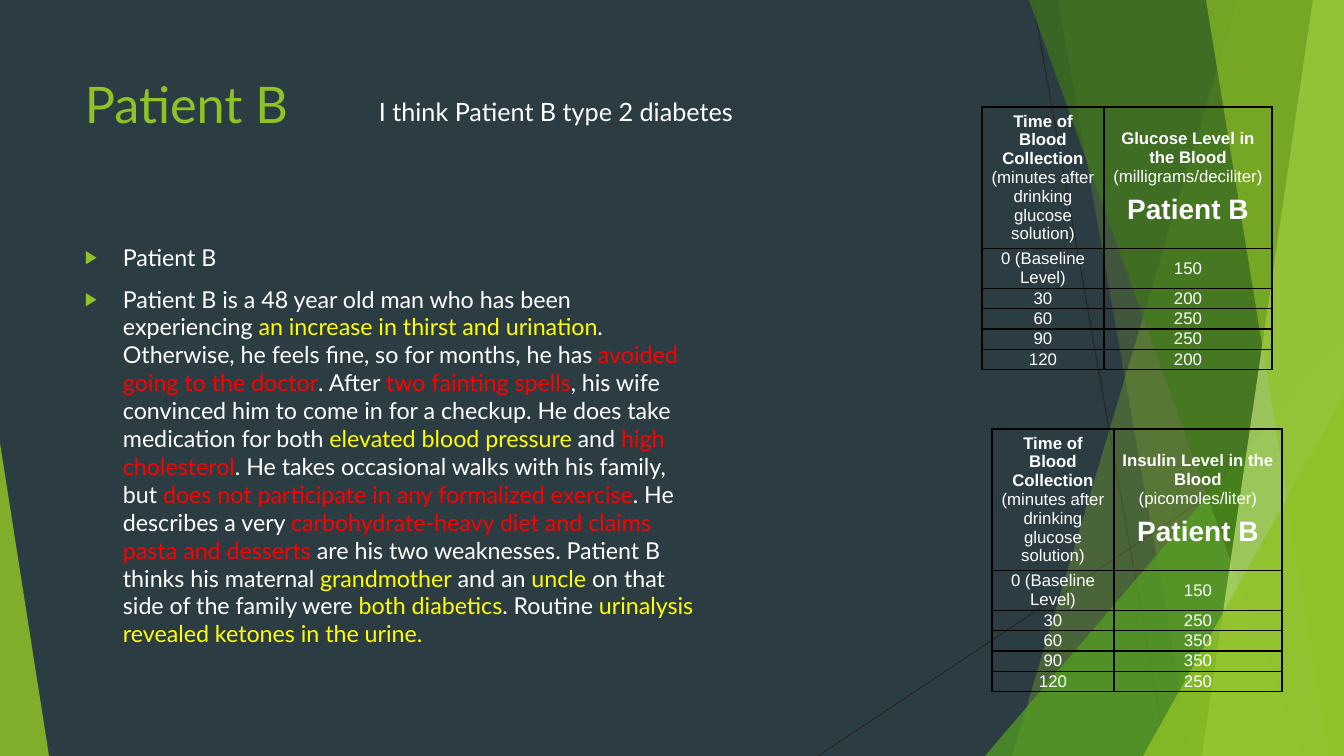
from lxml import etree
from pptx import Presentation
from pptx.dml.color import RGBColor
from pptx.enum.shapes import MSO_CONNECTOR, MSO_SHAPE
from pptx.enum.text import MSO_ANCHOR, PP_ALIGN
from pptx.oxml.ns import qn
from pptx.util import Pt

STRAIGHT, TRIANGLE = MSO_CONNECTOR.STRAIGHT, MSO_SHAPE.RIGHT_TRIANGLE
ISOSCELES = MSO_SHAPE.ISOSCELES_TRIANGLE
CENTER, MIDDLE = PP_ALIGN.CENTER, MSO_ANCHOR.MIDDLE

WIDTH, HEIGHT = 1344, 756
EMU_PER_PX = 12192000 / WIDTH
COLORS = {
    "background": "2C3C43", "line": "262626", "border": "000000",
    "lime": "90C226", "green": "54A021", "forest": "3F7819", "pale": "C0E474",
    "white": "FFFFFF", "yellow": "FFFF00", "red": "FF0000",
}

# Thin lines: start x, start y, end x, end y
LINES = [(1033, 0, 1167, 756), (1344, 406, 818, 756)]
# From back to front. Band: top x, bottom x. Triangle: left, top, width, apex.
FACETS = [
    ("band", (1238, 1012), "lime", 30),
    ("band", (1058, 1192), "lime", 20),
    ("triangle", (985, 336, 359, 1), "green", 72),
    ("band", (1029, 1301), "forest", 70),
    ("band", (1313, 1202), "pale", 70),
    ("band", (1206, 1329), "lime", 65),
    ("triangle", (1143, 396, 201, 1), "lime", 80),
    ("triangle", (0, 443, 49, 0), "lime", 85),
]

TITLE = [[("Patient B", "lime")]]
DIAGNOSIS = [[("I think Patient B type 2 diabetes", "white")]]
HISTORY = [
    [("Patient B", "white")],
    [
        ("Patient B is a 48 year old man who has been experiencing ", "white"),
        ("an increase in thirst and urination", "yellow"),
        (". Otherwise, he feels fine, so for months, he has ", "white"),
        ("avoided going to the doctor", "red"),
        (". After ", "white"),
        ("two fainting spells", "red"),
        (", his wife convinced him to come in for a checkup. "
         "He does take medication for both ", "white"),
        ("elevated blood pressure", "yellow"),
        (" and ", "white"),
        ("high cholesterol", "red"),
        (". He takes occasional walks with his family, but ", "white"),
        ("does not participate in any formalized exercise", "red"),
        (". He describes a very ", "white"),
        ("carbohydrate-heavy diet and claims pasta and desserts", "red"),
        (" are his two weaknesses. Patient B thinks his maternal ", "white"),
        ("grandmother", "yellow"),
        (" and an ", "white"),
        ("uncle", "yellow"),
        (" on that side of the family were ", "white"),
        ("both diabetics", "yellow"),
        (". Routine ", "white"),
        ("urinalysis revealed ketones in the urine.", "yellow"),
    ],
]

TIMES = ["0 (Baseline Level)", "30", "60", "90", "120"]
TIME_HEADING = ("Time of Blood Collection",
                " (minutes after drinking glucose solution)")
# Left, top, heading, unit, values
TABLES = [
    (982, 107, "Glucose Level in the Blood", " (milligrams/deciliter)",
     [150, 200, 250, 250, 200]),
    (992, 429, "Insulin Level in the Blood", " (picomoles/liter)",
     [150, 250, 350, 350, 250]),
]
COLUMN_WIDTHS = [122, 168]
ROW_HEIGHTS = [131, 38, 19, 19, 19, 19]
CELL_MARGIN = 7


def px(length):
    return round(length * EMU_PER_PX)


def rgb(name):
    return RGBColor.from_string(COLORS[name])


def add_span(para, text, font, size, color, bold=False):
    span = para.add_run()
    span.text = text
    span.font.name, span.font.size, span.font.bold = font, Pt(size), bold
    span.font.color.rgb = rgb(color)


def add_line(page, ends):
    line = page.shapes.add_connector(STRAIGHT, *map(px, ends))
    line.line.color.rgb = rgb("line")
    line.line.width = Pt(0.75)
    etree.SubElement(line._element.spPr, qn("a:effectLst"))


def add_facet(page, kind, place, color, opacity):
    """Draw one translucent piece that reaches the bottom of the slide."""
    if kind == "band":
        top_x, bottom_x = place
        builder = page.shapes.build_freeform(px(top_x), 0)
        corners = [(WIDTH, 0), (WIDTH, HEIGHT), (bottom_x, HEIGHT)]
        builder.add_line_segments([(px(x), px(y)) for x, y in corners])
        facet = builder.convert_to_shape()
    else:
        left, top, width, apex = place
        facet = page.shapes.add_shape(
            ISOSCELES, px(left), px(top), px(width), px(HEIGHT - top))
        facet.adjustments[0] = apex
    facet.shadow.inherit = False
    facet.line.fill.background()
    facet.fill.solid()
    facet.fill.fore_color.rgb = rgb(color)
    tint = facet._element.spPr.find(".//" + qn("a:srgbClr"))
    etree.SubElement(tint, qn("a:alpha"), val=str(opacity * 1000))


def add_bullet(para):
    props = para._p.get_or_add_pPr()
    props.set("marL", str(px(38)))
    props.set("indent", str(-px(38)))
    tint = etree.SubElement(props, qn("a:buClr"))
    etree.SubElement(tint, qn("a:srgbClr"), val=COLORS["lime"])
    etree.SubElement(props, qn("a:buSzPct"), val="80000")
    etree.SubElement(props, qn("a:buFont"), typeface="Arial")
    etree.SubElement(props, qn("a:buChar"), char="▶")


def add_text(page, place, paragraphs, size, bulleted=False):
    box = page.shapes.add_textbox(*map(px, place))
    frame = box.text_frame
    frame.word_wrap = True
    for index, spans in enumerate(paragraphs):
        para = frame.add_paragraph() if index else frame.paragraphs[0]
        if bulleted:
            para.space_before = Pt(10)
            add_bullet(para)
        for text, color in spans:
            add_span(para, text, "Lato", size, color)


def fill_cell(cell, paragraphs):
    """Write (text, size, bold) spans into a bordered, see-through cell."""
    cell.vertical_anchor = MIDDLE
    cell.margin_left = cell.margin_right = px(CELL_MARGIN)
    cell.margin_top = cell.margin_bottom = 0
    for index, spans in enumerate(paragraphs):
        frame = cell.text_frame
        para = frame.add_paragraph() if index else frame.paragraphs[0]
        para.alignment = CENTER
        para.space_after = Pt(6)
        for text, size, bold in spans:
            add_span(para, text, "Arial", size, "white", bold)
    props = cell._tc.get_or_add_tcPr()
    for side in ("lnL", "lnR", "lnT", "lnB"):
        edge = etree.SubElement(props, qn("a:" + side), w=str(Pt(1)))
        paint = etree.SubElement(edge, qn("a:solidFill"))
        etree.SubElement(paint, qn("a:srgbClr"), val=COLORS["border"])
    cell.fill.background()


def add_level_table(page, left, top, heading, unit, values):
    table = page.shapes.add_table(
        len(ROW_HEIGHTS), len(COLUMN_WIDTHS), px(left), px(top),
        px(sum(COLUMN_WIDTHS)), px(sum(ROW_HEIGHTS))).table
    table.first_row = table.horz_banding = False
    for column, width in zip(table.columns, COLUMN_WIDTHS):
        column.width = px(width)
    for row, height in zip(table.rows, ROW_HEIGHTS):
        row.height = px(height)
    title, detail = TIME_HEADING
    fill_cell(table.cell(0, 0), [[(title, 12, True), (detail, 12, False)]])
    fill_cell(table.cell(0, 1), [[(heading, 12, True), (unit, 12, False)],
                                 [("Patient B", 20, True)]])
    for row, pair in enumerate(zip(TIMES, values), start=1):
        for column, entry in enumerate(pair):
            fill_cell(table.cell(row, column), [[(str(entry), 12, False)]])


def main():
    deck = Presentation()
    deck.slide_width, deck.slide_height = px(WIDTH), px(HEIGHT)
    page = deck.slides.add_slide(deck.slide_layouts[6])
    page.background.fill.solid()
    page.background.fill.fore_color.rgb = rgb("background")
    for ends in LINES:
        add_line(page, ends)
    for facet in FACETS:
        add_facet(page, *facet)
    add_text(page, (75, 68, 948, 145), TITLE, 36)
    add_text(page, (75, 238, 635, 427), HISTORY, 16.6, bulleted=True)
    for level_table in TABLES:
        add_level_table(page, *level_table)
    add_text(page, (369, 91, 453, 40), DIAGNOSIS, 18)
    deck.save("out.pptx")


if __name__ == "__main__":
    main()
